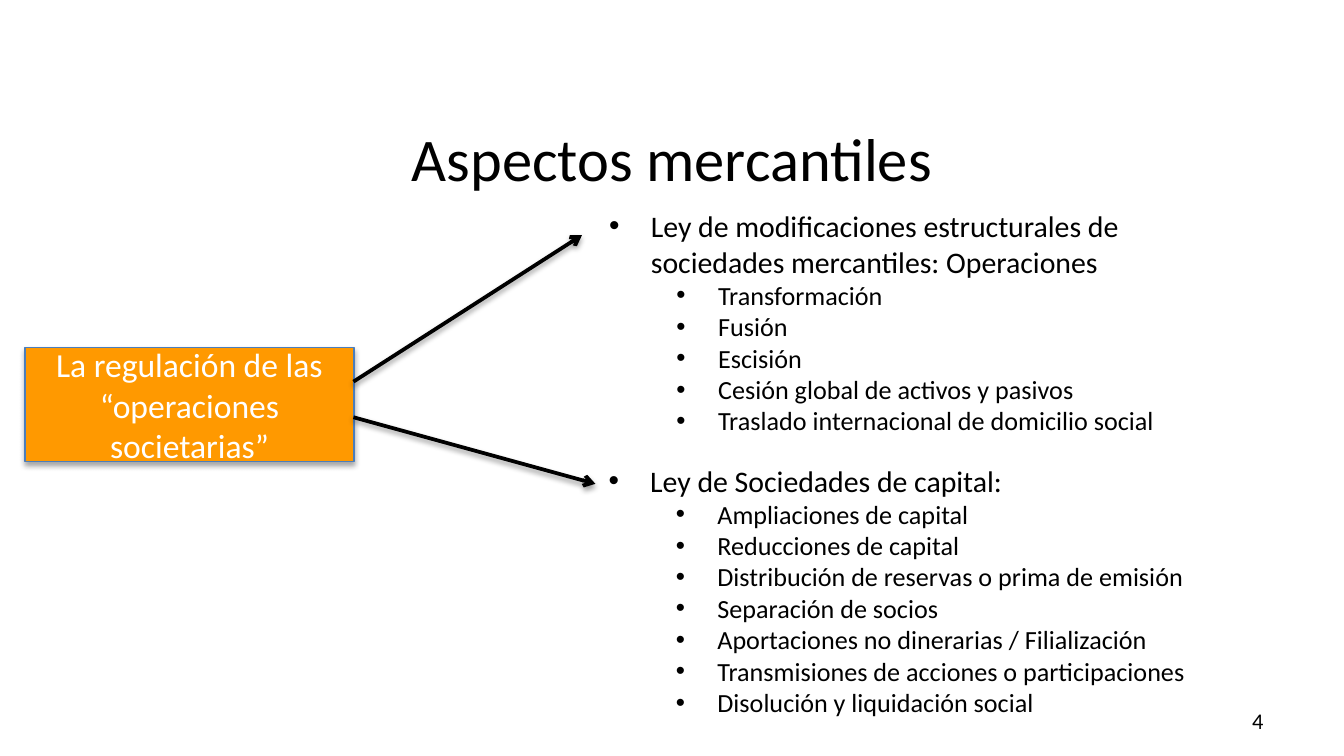
from lxml import etree
from pptx import Presentation
from pptx.dml.color import RGBColor
from pptx.enum.shapes import MSO_CONNECTOR, MSO_SHAPE
from pptx.enum.text import MSO_ANCHOR, PP_ALIGN
from pptx.oxml.ns import qn
from pptx.util import Pt

PX = 4572
FONT = "Calibri"
COLORS = {"text": "000000", "box": "FF9900", "border": "4B7EBC", "white": "FFFFFF"}
RECT = MSO_SHAPE.RECTANGLE
STRAIGHT = MSO_CONNECTOR.STRAIGHT
LEFT, CENTER, RIGHT = PP_ALIGN.LEFT, PP_ALIGN.CENTER, PP_ALIGN.RIGHT
TOP, MIDDLE = MSO_ANCHOR.TOP, MSO_ANCHOR.MIDDLE

HANGING = 62
LEVEL_INDENT = 100

LAWS = [
    ((887, 299, 912, 364),
     "Ley de modificaciones estructurales de sociedades mercantiles: Operaciones",
     ["Transformación", "Fusión", "Escisión", "Cesión global de activos y pasivos",
      "Traslado internacional de domicilio social"]),
    ((886, 678, 912, 404),
     "Ley de Sociedades de capital:",
     ["Ampliaciones de capital", "Reducciones de capital",
      "Distribución de reservas o prima de emisión", "Separación de socios",
      "Aportaciones no dinerarias / Filialización",
      "Transmisiones de acciones o participaciones", "Disolución y liquidación social"]),
]


def emu(*lengths):
    return [n * PX for n in lengths]


def rgb(name):
    return RGBColor.from_string(COLORS[name])


def add_text(p, text, size=14, color="text", align=LEFT):
    p.alignment = align
    r = p.add_run()
    r.text = text
    r.font.size = Pt(size)
    r.font.name = FONT
    r.font.color.rgb = rgb(color)


def add_bullet(p, level):
    p.level = level
    pPr = p._p.get_or_add_pPr()
    pPr.set("marL", str((HANGING + LEVEL_INDENT * level) * PX))
    pPr.set("indent", str(-HANGING * PX))
    etree.SubElement(pPr, qn("a:buFont"), typeface="Arial")
    etree.SubElement(pPr, qn("a:buChar"), char="•")


def add_shadow(sp, distance, opacity):
    spPr = sp._element.spPr
    effects = etree.SubElement(spPr, qn("a:effectLst"))
    shadow = etree.SubElement(
        effects, qn("a:outerShdw"), blurRad=str(Pt(3.1)), dist=str(Pt(distance)),
        dir="5400000", rotWithShape="0")
    color = etree.SubElement(shadow, qn("a:srgbClr"), val=COLORS["text"])
    etree.SubElement(color, qn("a:alpha"), val=str(opacity * 1000))


def text_frame(s, box, anchor=TOP):
    tf = s.shapes.add_textbox(*emu(*box)).text_frame
    tf.word_wrap = True
    tf.vertical_anchor = anchor
    return tf


def label(s, box, text, **fmt):
    tf = text_frame(s, box, MIDDLE)
    add_text(tf.paragraphs[0], text, **fmt)


def topic_box(s, box, text):
    sp = s.shapes.add_shape(RECT, *emu(*box))
    sp.fill.solid()
    sp.fill.fore_color.rgb = rgb("box")
    sp.line.color.rgb = rgb("border")
    sp.line.width = Pt(0.75)
    add_shadow(sp, distance=1.8, opacity=35)
    tf = sp.text_frame
    tf.word_wrap = True
    tf.vertical_anchor = MIDDLE
    add_text(tf.paragraphs[0], text, size=18, color="white", align=CENTER)


def law_list(s, box, heading, items):
    tf = text_frame(s, box)
    p = tf.paragraphs[0]
    add_bullet(p, 0)
    add_text(p, heading, size=16)
    for item in items:
        p = tf.add_paragraph()
        add_bullet(p, 1)
        add_text(p, item)


def arrow(s, start, end):
    line = s.shapes.add_connector(STRAIGHT, *emu(*start, *end))
    line.line.color.rgb = rgb("text")
    line.line.width = Pt(2)
    ln = line._element.spPr.find(qn("a:ln"))
    etree.SubElement(ln, qn("a:tailEnd"), type="arrow")
    add_shadow(line, distance=1.6, opacity=38)


def main():
    prs = Presentation()
    prs.slide_width, prs.slide_height = emu(2000, 1125)
    s = prs.slides.add_slide(prs.slide_layouts[6])
    label(s, (100, 170, 1800, 128), "Aspectos mercantiles", size=32.4, align=CENTER)
    label(s, (1434, 1043, 466, 60), "4", size=12, align=RIGHT)
    topic_box(s, (37, 517, 490, 170), "La regulación de las “operaciones societarias”")
    for box, heading, items in LAWS:
        law_list(s, box, heading, items)
    arrow(s, (526, 568), (866, 350))
    arrow(s, (526, 621), (886, 720))
    prs.save("out.pptx")


if __name__ == "__main__":
    main()
